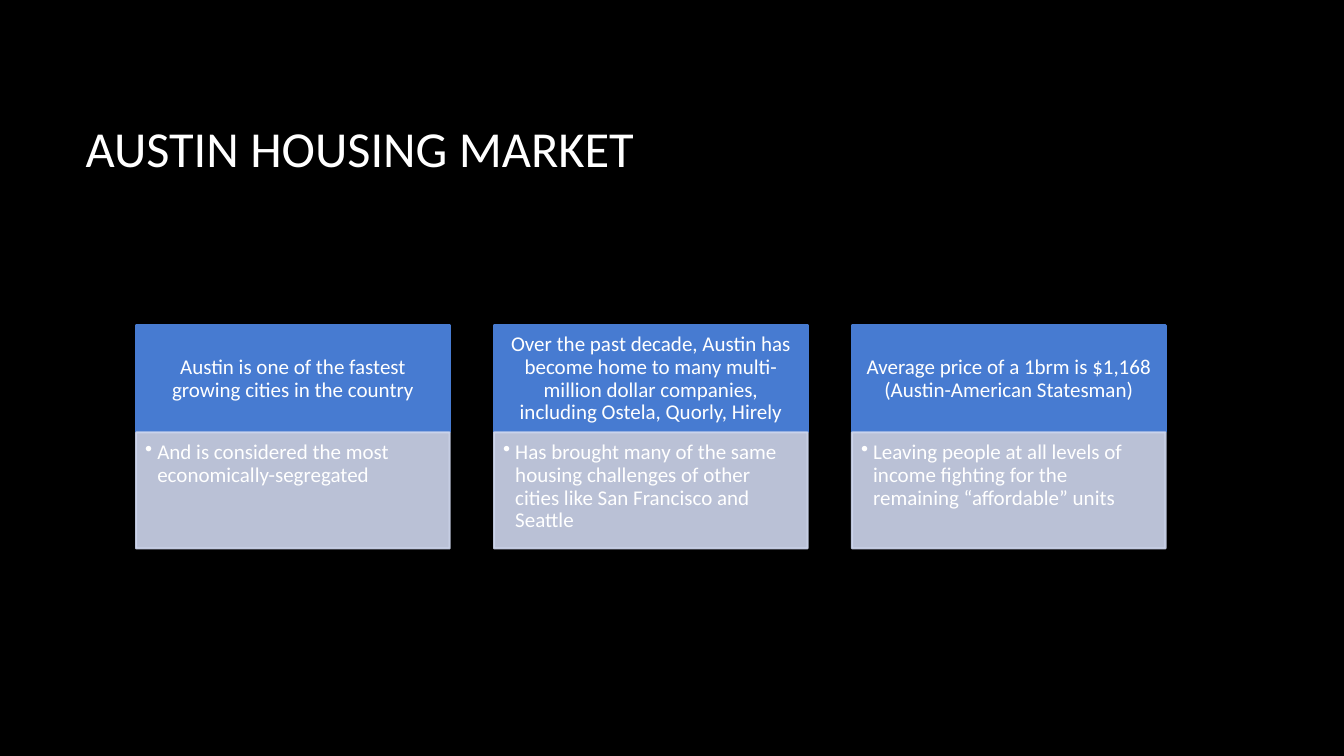
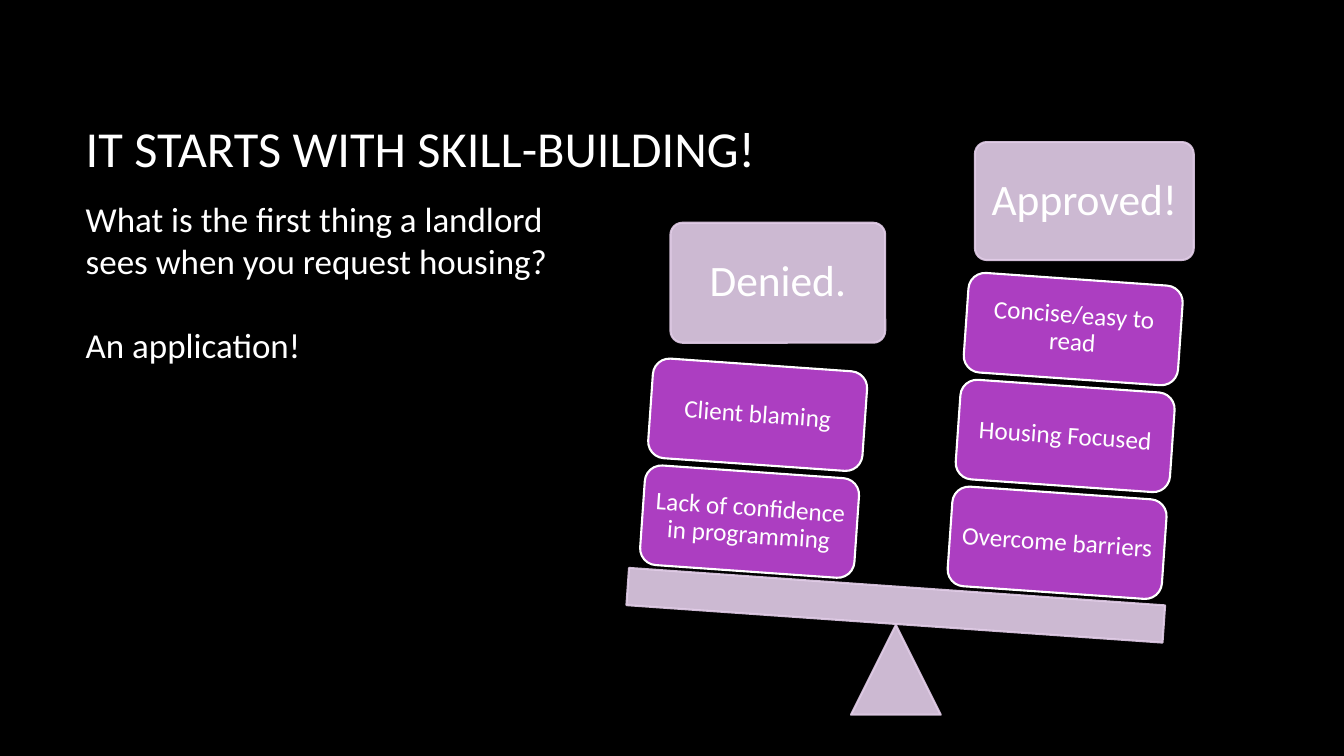
import pptx
import pptx.dml.color
import pptx.enum.shapes
import pptx.enum.text
import pptx.oxml
import pptx.oxml.ns
import pptx.util
from lxml import etree

Inches = pptx.util.Inches
Pt = pptx.util.Pt
RGBColor = pptx.dml.color.RGBColor
SHAPE = pptx.enum.shapes.MSO_SHAPE
ALIGN = pptx.enum.text.PP_ALIGN
ANCHOR = pptx.enum.text.MSO_ANCHOR
qn = pptx.oxml.ns.qn

BLACK = RGBColor(0x00, 0x00, 0x00)
WHITE = RGBColor(0xFF, 0xFF, 0xFF)
BLUE = RGBColor(0x47, 0x7B, 0xD1)
PALE_BLUE = RGBColor(0xCF, 0xD7, 0xEE)
PURPLE = RGBColor(0xAC, 0x3E, 0xC1)
PALE_PURPLE = RGBColor(0xE3, 0xCE, 0xE9)
FONT = "Calibri"
TILT = 4

MARKET = [
    ("Austin is one of the fastest growing cities in the country",
     "And is considered the most economically-segregated"),
    ("Over the past decade, Austin has become home to many multi-million "
     "dollar companies, including Ostela, Quorly, Hirely",
     "Has brought many of the same housing challenges of other cities "
     "like San Francisco and Seattle"),
    ("Average price of a 1brm is $1,168 (Austin-American Statesman)",
     "Leaving people at all levels of income fighting for the remaining "
     "“affordable” units"),
]
DENIED = ["Lack of confidence in programming", "Client blaming"]
APPROVED = ["Overcome barriers", "Housing Focused", "Concise/easy to read"]


def place(sp, left, top, width, height):
    """Move and size a shape, in inches."""
    sp.left, sp.top = Inches(left), Inches(top)
    sp.width, sp.height = Inches(width), Inches(height)


def add_text(p, text, size):
    """Add one white run to a paragraph."""
    r = p.add_run()
    r.text = text
    r.font.name = FONT
    r.font.size = Pt(size)
    r.font.color.rgb = WHITE


def set_bullet(p, char=None, indent=0):
    """Give a paragraph a hanging bullet, or none."""
    pPr = p._p.get_or_add_pPr()
    pPr.set("marL", str(Inches(indent)))
    pPr.set("indent", str(-Inches(indent)))
    if char:
        etree.SubElement(pPr, qn("a:buChar")).set("char", char)
    else:
        etree.SubElement(pPr, qn("a:buNone"))


def add_box(s, kind, box, fill, line=None, alpha=None, tilt=0):
    """Add a filled and outlined shape."""
    sp = s.shapes.add_shape(kind, *[Inches(v) for v in box])
    sp.shadow.inherit = False
    sp.rotation = tilt
    sp.fill.solid()
    sp.fill.fore_color.rgb = fill
    sp.line.color.rgb = line or fill
    sp.line.width = Pt(1.5)
    if alpha:
        for color in sp._element.spPr.iter(qn("a:srgbClr")):
            etree.SubElement(color, qn("a:alpha")).set("val", str(alpha * 1000))
    return sp


def label(sp, text, size, insets, align=ALIGN.CENTER, anchor=ANCHOR.MIDDLE, bullet=None):
    """Write a single paragraph inside a shape."""
    tf = sp.text_frame
    tf.word_wrap = True
    tf.vertical_anchor = anchor
    tf.margin_left, tf.margin_top, tf.margin_right, tf.margin_bottom = [Inches(v) for v in insets]
    p = tf.paragraphs[0]
    p.alignment = align
    p.line_spacing = 0.9
    if bullet:
        set_bullet(p, bullet, 0.12)
    add_text(p, text, size)


def add_slide(prs, layout, title):
    """Add a slide with the shared title style."""
    s = prs.slides.add_slide(prs.slide_layouts[layout])
    place(s.shapes.title, 0.75, 0.67, 11.08, 1.59)
    tf = s.shapes.title.text_frame
    tf.vertical_anchor = ANCHOR.MIDDLE
    p = tf.paragraphs[0]
    p.alignment = ALIGN.LEFT
    add_text(p, title, 36)
    return s


def market_card(s, left, top, head, detail):
    """Place a blue heading over a pale bulleted panel."""
    width, head_h, detail_h = 3.11, 1.06, 1.15
    sp = add_box(s, SHAPE.RECTANGLE, (left, top, width, head_h), BLUE)
    label(sp, head, 15, (0.12, 0.07, 0.12, 0.07))
    sp = add_box(s, SHAPE.RECTANGLE, (left, top + head_h, width, detail_h), PALE_BLUE, alpha=90)
    label(sp, detail, 15, (0.09, 0.09, 0.12, 0.13), ALIGN.LEFT, ANCHOR.TOP, "•")


def verdict(s, box, text):
    """Place a pale rounded verdict."""
    sp = add_box(s, SHAPE.ROUNDED_RECTANGLE, box, PALE_PURPLE, alpha=90)
    sp.adjustments[0] = 0.1
    label(sp, text, 31, (0.13,) * 4)


def weights(s, left, top, texts):
    """Stack tilted weights upwards from the lowest one."""
    for i, text in enumerate(texts):
        box = (left + 0.08 * i, top - 1.06 * i, 2.13, 0.99)
        sp = add_box(s, SHAPE.ROUNDED_RECTANGLE, box, PURPLE, WHITE, tilt=TILT)
        label(sp, text, 18, (0.07,) * 4)


def balance(s, left, top):
    """Draw the scale with its verdicts and weights."""
    verdict(s, (left + 0.43, top + 0.8, 2.13, 1.19), "Denied.")
    verdict(s, (left + 3.45, top, 2.17, 1.17), "Approved!")
    add_box(s, SHAPE.ISOSCELES_TRIANGLE, (left + 2.22, top + 4.79, 0.89, 0.89),
            PALE_PURPLE, alpha=90)
    add_box(s, SHAPE.RECTANGLE, (left, top + 4.41, 5.33, 0.37),
            PALE_PURPLE, alpha=90, tilt=TILT)
    weights(s, left + 0.15, top + 3.27, DENIED)
    weights(s, left + 3.2, top + 3.48, APPROVED)


def question(s, box):
    """Fill the body placeholder with the question and its answer."""
    body = s.placeholders[1]
    place(body, *box)
    tf = body.text_frame
    tf.word_wrap = True
    tf.auto_size = pptx.enum.text.MSO_AUTO_SIZE.NONE
    texts = ["What is the first thing a landlord sees when you request housing?",
             "An application!"]
    for i, text in enumerate(texts):
        p = tf.add_paragraph() if i else tf.paragraphs[0]
        set_bullet(p)
        p.space_before = Pt(30 * i)
        add_text(p, text, 25)


def market_slide(prs):
    """Build the housing market slide."""
    s = add_slide(prs, 5, "AUSTIN HOUSING MARKET")
    for i, (head, detail) in enumerate(MARKET):
        market_card(s, 1.35 + 3.55 * i, 3.23, head, detail)


def skill_slide(prs):
    """Build the skill-building slide."""
    s = add_slide(prs, 1, "IT STARTS WITH SKILL-BUILDING!")
    question(s, (0.75, 1.91, 4.97, 1.78))
    balance(s, 6.22, 1.41)


def main():
    """Build and save the presentation."""
    prs = pptx.Presentation()
    prs.slide_width, prs.slide_height = Inches(13.33), Inches(7.5)
    fill = prs.slide_master.background.fill
    fill.solid()
    fill.fore_color.rgb = BLACK
    market_slide(prs)
    skill_slide(prs)
    prs.save("out.pptx")


if __name__ == "__main__":
    main()
